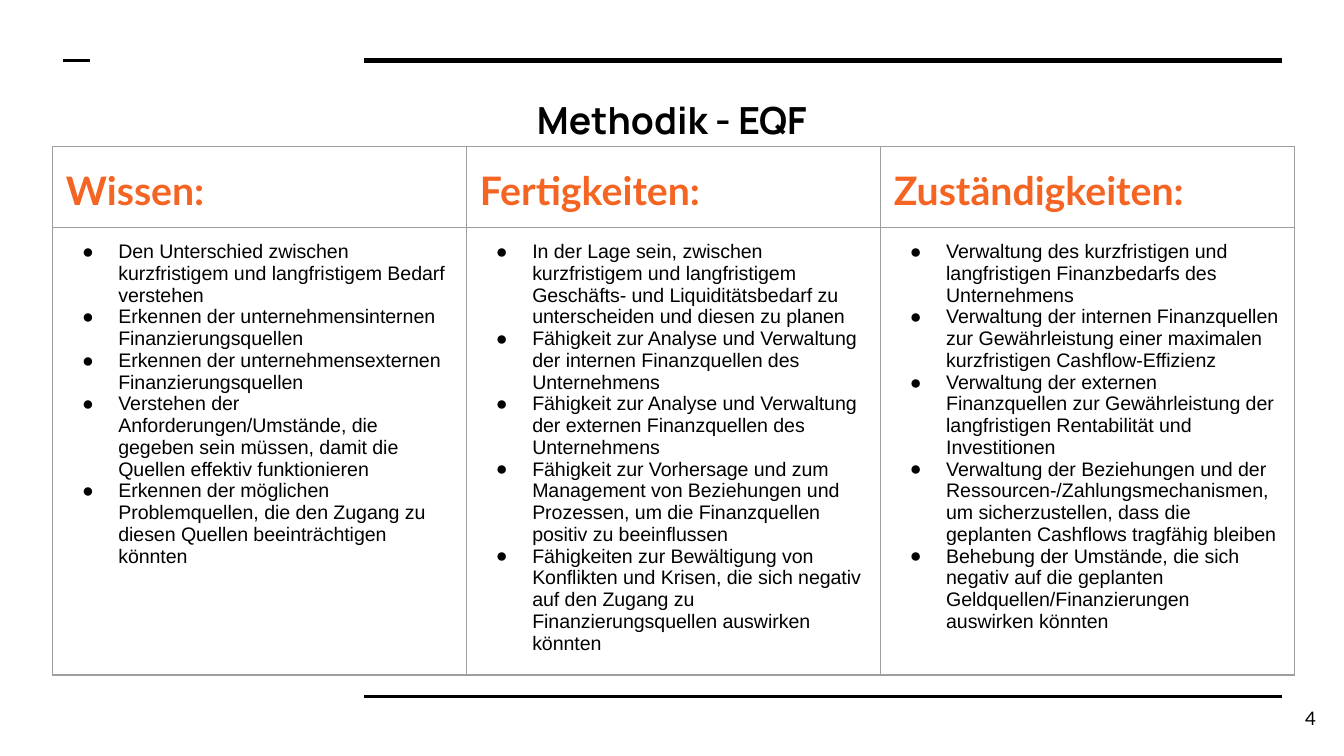
from lxml import etree
from pptx import Presentation
from pptx import util as u
from pptx.dml.color import RGBColor
from pptx.enum import shapes, text
from pptx.oxml.ns import qn

C = {"ink": "000000", "accent": "F46524", "grid": "9E9E9E"}
COLUMNS = {
    "Wissen:": [
        "Den Unterschied zwischen kurzfristigem und langfristigem Bedarf verstehen",
        "Erkennen der unternehmensinternen Finanzierungsquellen",
        "Erkennen der unternehmensexternen Finanzierungsquellen",
        "Verstehen der Anforderungen/Umstände, die gegeben sein müssen, damit die Quellen effektiv funktionieren",
        "Erkennen der möglichen Problemquellen, die den Zugang zu diesen Quellen beeinträchtigen könnten",
    ],
    "Fertigkeiten:": [
        "In der Lage sein, zwischen kurzfristigem und langfristigem Geschäfts- und Liquiditätsbedarf zu unterscheiden und diesen zu planen",
        "Fähigkeit zur Analyse und Verwaltung der internen Finanzquellen des Unternehmens",
        "Fähigkeit zur Analyse und Verwaltung der externen Finanzquellen des Unternehmens",
        "Fähigkeit zur Vorhersage und zum Management von Beziehungen und Prozessen, um die Finanzquellen positiv zu beeinflussen",
        "Fähigkeiten zur Bewältigung von Konflikten und Krisen, die sich negativ auf den Zugang zu Finanzierungsquellen auswirken könnten",
    ],
    "Zuständigkeiten:": [
        "Verwaltung des kurzfristigen und langfristigen Finanzbedarfs des Unternehmens",
        "Verwaltung der internen Finanzquellen zur Gewährleistung einer maximalen kurzfristigen Cashflow-Effizienz",
        "Verwaltung der externen Finanzquellen zur Gewährleistung der langfristigen Rentabilität und Investitionen",
        "Verwaltung der Beziehungen und der Ressourcen-/Zahlungsmechanismen, um sicherzustellen, dass die geplanten Cashflows tragfähig bleiben",
        "Behebung der Umstände, die sich negativ auf die geplanten Geldquellen/Finanzierungen auswirken könnten",
    ],
}


def add_run(p, words, font, size, color="ink", bold=False):
    r = p.add_run()
    r.text = words
    r.font.name, r.font.size, r.font.bold = font, u.Pt(size), bold
    r.font.color.rgb = RGBColor.from_string(C[color])


def set_frame(tf, anchor):
    tf.word_wrap = True
    tf.auto_size = text.MSO_AUTO_SIZE.NONE
    tf.vertical_anchor = anchor
    tf.margin_left = tf.margin_right = tf.margin_top = tf.margin_bottom = u.Inches(0.1)


prs = Presentation()
prs.slide_width = u.Inches(10)
prs.slide_height = u.Inches(10 * 9 / 16)
s = prs.slides.add_slide(prs.slide_layouts[5])

for x1, x2, y, width in [(2.71, 9.54, 0.45, 3), (2.71, 9.54, 5.18, 1.5), (0.47, 0.67, 0.45, 1.5)]:
    rule = s.shapes.add_connector(
        shapes.MSO_CONNECTOR.STRAIGHT, u.Inches(x1), u.Inches(y), u.Inches(x2), u.Inches(y))
    rule.line.color.rgb = RGBColor.from_string(C["ink"])
    rule.line.width = u.Pt(width)
    etree.SubElement(rule._element.spPr, qn("a:effectLst"))

title = s.shapes.title
title.left, title.top, title.width, title.height = [u.Inches(v) for v in (1.41, 0.62, 7.18, 0.69)]
set_frame(title.text_frame, text.MSO_ANCHOR.TOP)
p = title.text_frame.paragraphs[0]
p.alignment = text.PP_ALIGN.CENTER
add_run(p, "Methodik - EQF", "Manrope", 20, bold=True)

table = s.shapes.add_table(
    2, 3, u.Inches(0.39), u.Inches(1.09), u.Inches(9.24), u.Inches(3.93)).table
table.first_row = table.horz_banding = False
table.rows[0].height, table.rows[1].height = u.Inches(0.6), u.Inches(3.33)

for i, (heading, points) in enumerate(COLUMNS.items()):
    table.columns[i].width = u.Inches(3.08)
    head, body = table.cell(0, i), table.cell(1, i)
    p = head.text_frame.paragraphs[0]
    p.line_spacing = 1.15
    add_run(p, heading, "Lato", 21, "accent", True)

    tf = body.text_frame
    for j, point in enumerate(points):
        p = tf.add_paragraph() if j else tf.paragraphs[0]
        add_run(p, point, "Arial", 10.5)
        pPr = p._p.get_or_add_pPr()
        pPr.set("marL", str(u.Inches(0.39)))
        pPr.set("indent", str(u.Inches(-0.27)))
        color = etree.SubElement(pPr, qn("a:buClr"))
        etree.SubElement(color, qn("a:srgbClr"), val=C["ink"])
        etree.SubElement(pPr, qn("a:buFont"), typeface="Arial")
        etree.SubElement(pPr, qn("a:buChar"), char="●")

    for cell in (head, body):
        cell.margin_left = cell.margin_right = cell.margin_top = cell.margin_bottom = u.Inches(0.1)
        tcPr = cell._tc.get_or_add_tcPr()
        for side in ("lnL", "lnR", "lnT", "lnB"):
            ln = etree.SubElement(tcPr, qn("a:" + side), w=str(u.Pt(0.75)))
            fill = etree.SubElement(ln, qn("a:solidFill"))
            etree.SubElement(fill, qn("a:srgbClr"), val=C["grid"])
        cell.fill.background()

number = s.shapes.add_textbox(u.Inches(9.29), u.Inches(5.13), u.Inches(0.6), u.Inches(0.43))
set_frame(number.text_frame, text.MSO_ANCHOR.MIDDLE)
p = number.text_frame.paragraphs[0]
p.alignment = text.PP_ALIGN.RIGHT
add_run(p, "4", "Lato", 10)

prs.save("out.pptx")
